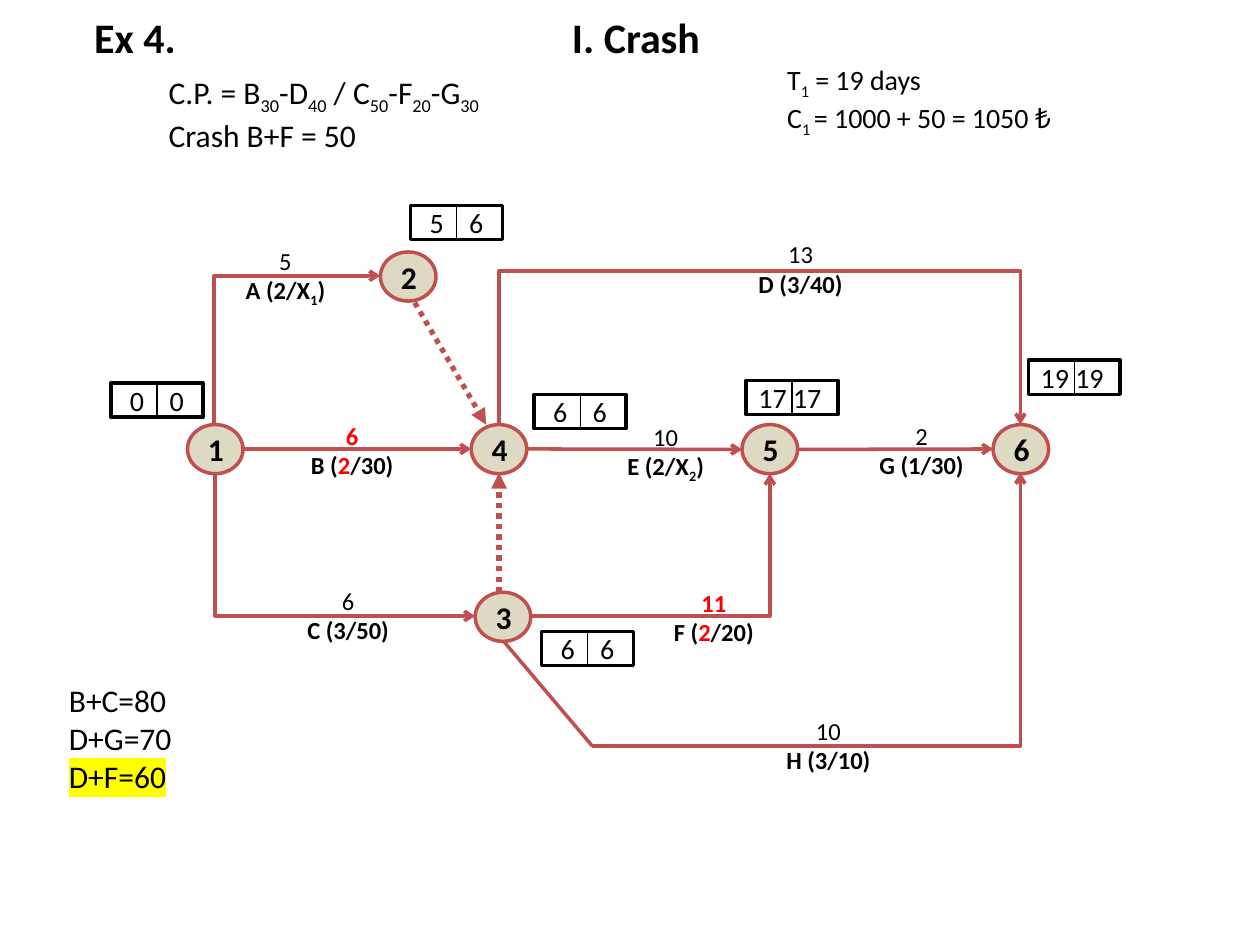
from lxml import etree
from pptx import Presentation
from pptx.dml.color import RGBColor
from pptx.enum.dml import MSO_LINE
from pptx.enum.shapes import MSO_CONNECTOR, MSO_SHAPE
from pptx.enum.text import MSO_ANCHOR, MSO_AUTO_SIZE, PP_ALIGN
from pptx.oxml.ns import qn
from pptx.util import Cm, Pt

BLACK = RGBColor(0, 0, 0)
WHITE = RGBColor(255, 255, 255)
RED = RGBColor(255, 0, 0)
BRICK = RGBColor(0xC0, 0x50, 0x4D)
SAND = RGBColor(0xDD, 0xD9, 0xC3)
YELLOW = RGBColor(255, 255, 0)
DOT = MSO_LINE.ROUND_DOT
OVAL, RECT = MSO_SHAPE.OVAL, MSO_SHAPE.RECTANGLE
LINE, ELBOW = MSO_CONNECTOR.STRAIGHT, MSO_CONNECTOR.ELBOW
LEFT, CENTER = PP_ALIGN.LEFT, PP_ALIGN.CENTER
GROW, MIDDLE = MSO_AUTO_SIZE.SHAPE_TO_FIT_TEXT, MSO_ANCHOR.MIDDLE

NODE_W, NODE_H = 1.12, 0.99
BOX_W, BOX_H = 1.85, 0.69
NODES = [("1", 3.78, 8.56), ("2", 7.67, 5.08), ("3", 9.58, 11.94),
         ("4", 9.5, 8.56), ("5", 14.96, 8.56), ("6", 20.02, 8.56)]
TIMES = [("5\t6", 8.28, 4.14), ("6\t6", 10.77, 7.95), ("6\t6", 10.92, 12.73),
         ("0\t0", 2.24, 7.72), ("17 17", 15.04, 7.67), ("19 19", 20.73, 7.26)]
TASKS = [("5", "A (2/X|_1|)", 4.47, 4.83, 2.57),
         ("!6", "B (|!2|/30)", 5.41, 8.36, 3.38),
         ("6", "C (3/50)", 5.33, 11.68, 3.38),
         ("13", "D (3/40)", 14.45, 4.7, 3.38),
         ("10", "E (2/X|_2|)", 11.73, 8.38, 3.38),
         ("!11", "F (|!2|/20)", 12.7, 11.73, 3.38),
         ("2", "G (1/30)", 16.89, 8.36, 3.38),
         ("10", "H (3/10)", 15.01, 14.3, 3.38)]
ARROW, HEAD = {"tailEnd": "arrow"}, {"headEnd": "arrow"}
DOTTED = {"tailEnd": "triangle"}
LINKS = [((4.89, 9.05), (9.5, 9.05), ARROW), ((10.62, 9.05), (14.96, 9.06), ARROW),
         ((16.08, 9.06), (20.02, 9.05), ARROW), ((11.94, 15.04), (10.13, 12.9), {})]
BENDS = [((7.67, 5.56), (4.32, 8.56), HEAD), ((9.58, 12.42), (4.34, 9.53), HEAD),
         ((10.67, 12.42), (15.52, 9.55), ARROW), ((11.94, 15.04), (20.57, 9.53), ARROW)]
DUMMIES = [((8.36, 6.1), (9.8, 8.56)), ((10.06, 11.94), (10.06, 9.53))]
TOP_ROUTE = [(10.06, 8.56), (10.06, 5.46), (20.57, 5.46), (20.57, 8.56)]


def apply(target, values):
    for name, value in values.items():
        setattr(target, name, value)


class Board:
    face = "Calibri"

    def __init__(self, slide):
        self.shapes = slide.shapes

    def fill_in(self, frame, lines, size, bold=False, align=LEFT):
        for i, line in enumerate(lines):
            para = frame.paragraphs[0] if i == 0 else frame.add_paragraph()
            para.alignment = align
            heavy = bold or (bold is None and (i > 0 or line[0] == "!"))
            for part in line.split("|"):
                mark = part[0] if part[0] in "_!~" else ""
                run = para.add_run()
                run.text = part[len(mark):]
                apply(run.font, {"size": Pt(size), "bold": heavy, "name": self.face})
                run.font.color.rgb = RED if mark == "!" else BLACK
                props = run._r.get_or_add_rPr()
                if mark == "_":
                    props.set("baseline", "-25000")
                if mark == "~":
                    glow = etree.Element(qn("a:highlight"))
                    etree.SubElement(glow, qn("a:srgbClr"), val=str(YELLOW))
                    props.find(qn("a:solidFill")).addnext(glow)

    def text(self, lines, x, y, w, h, size, **look):
        frame = self.shapes.add_textbox(Cm(x), Cm(y), Cm(w), Cm(h)).text_frame
        apply(frame, {"word_wrap": True, "auto_size": GROW})
        self.fill_in(frame, lines, size, **look)

    def pen(self, shape, color, width, ends):
        shape.line.color.rgb = color
        shape.line.width = Pt(width)
        edge = shape._element.spPr.find(qn("a:ln"))
        for tag, kind in ends.items():
            etree.SubElement(edge, qn("a:" + tag), type=kind)

    def form(self, kind, x, y, w, h, fill, edge):
        shape = self.shapes.add_shape(kind, Cm(x), Cm(y), Cm(w), Cm(h))
        shape.shadow.inherit = False
        shape.fill.solid()
        shape.fill.fore_color.rgb = fill
        self.pen(shape, edge, 2, {})
        apply(shape.text_frame, {"word_wrap": True, "vertical_anchor": MIDDLE})
        return shape.text_frame

    def node(self, name, x, y):
        frame = self.form(OVAL, x, y, NODE_W, NODE_H, SAND, BRICK)
        self.fill_in(frame, [name], 18, True, CENTER)

    def times(self, pair, x, y):
        frame = self.form(RECT, x, y, BOX_W, BOX_H, WHITE, BLACK)
        self.fill_in(frame, [pair], 16)
        if "\t" in pair:
            frame.margin_left = Cm(0.38)
            props = frame.paragraphs[0]._p.get_or_add_pPr()
            tabs = etree.SubElement(props, qn("a:tabLst"))
            etree.SubElement(tabs, qn("a:tab"), pos=str(Cm(0.8)), algn="l")
        mid = x + BOX_W / 2
        self.link((mid, y), (mid, y + BOX_H), {}, color=BLACK, width=0.75)

    def link(self, start, end, ends, kind=LINE, color=BRICK, width=2, dash=None):
        wire = self.shapes.add_connector(kind, *map(Cm, start + end))
        wire.line.dash_style = dash
        self.pen(wire, color, width, ends)
        props = wire._element.spPr
        etree.SubElement(props, qn("a:effectLst"))
        if kind == ELBOW:
            props.find(qn("a:prstGeom")).set("prst", "bentConnector2")

    def route(self, points, ends):
        first, *rest = [(Cm(x), Cm(y)) for x, y in points]
        pencil = self.shapes.build_freeform(*first)
        pencil.add_line_segments(rest, close=False)
        shape = pencil.convert_to_shape()
        shape.shadow.inherit = False
        shape.fill.background()
        self.pen(shape, BRICK, 2, ends)


def main():
    deck = Presentation()
    apply(deck, {"slide_width": Cm(25.4), "slide_height": Cm(19.05)})
    board = Board(deck.slides.add_slide(deck.slide_layouts[6]))
    board.text(["Ex 4."], 1.65, 0.1, 7.52, 1.27, 24, bold=True)
    board.text(["I. Crash"], 11.28, 0.1, 3.48, 1.27, 24, bold=True)
    board.text(["C.P. = B|_30|-D|_40| / C|_50|-F|_20|-G|_30", "Crash B+F = 50"],
               3.15, 1.35, 15.95, 1.8, 18)
    board.text(["T|_1| = 19 days", "C|_1 |= 1000 + 50 = 1050 ₺"],
               15.62, 1.14, 9.5, 1.63, 16)
    board.text(["B+C=80", "D+G=70", "~D+F=60"], 1.14, 13.61, 7.11, 2.57, 18)
    for link in LINKS:
        board.link(*link)
    for bend in BENDS:
        board.link(*bend, kind=ELBOW)
    for start, end in DUMMIES:
        board.link(start, end, DOTTED, width=3, dash=DOT)
    board.route(TOP_ROUTE, ARROW)
    for node in NODES:
        board.node(*node)
    for pair in TIMES:
        board.times(*pair)
    for days, task, x, y, w in TASKS:
        board.text([days, task], x, y, w, 1.45, 14, bold=None, align=CENTER)
    deck.save("out.pptx")


if __name__ == "__main__":
    main()
